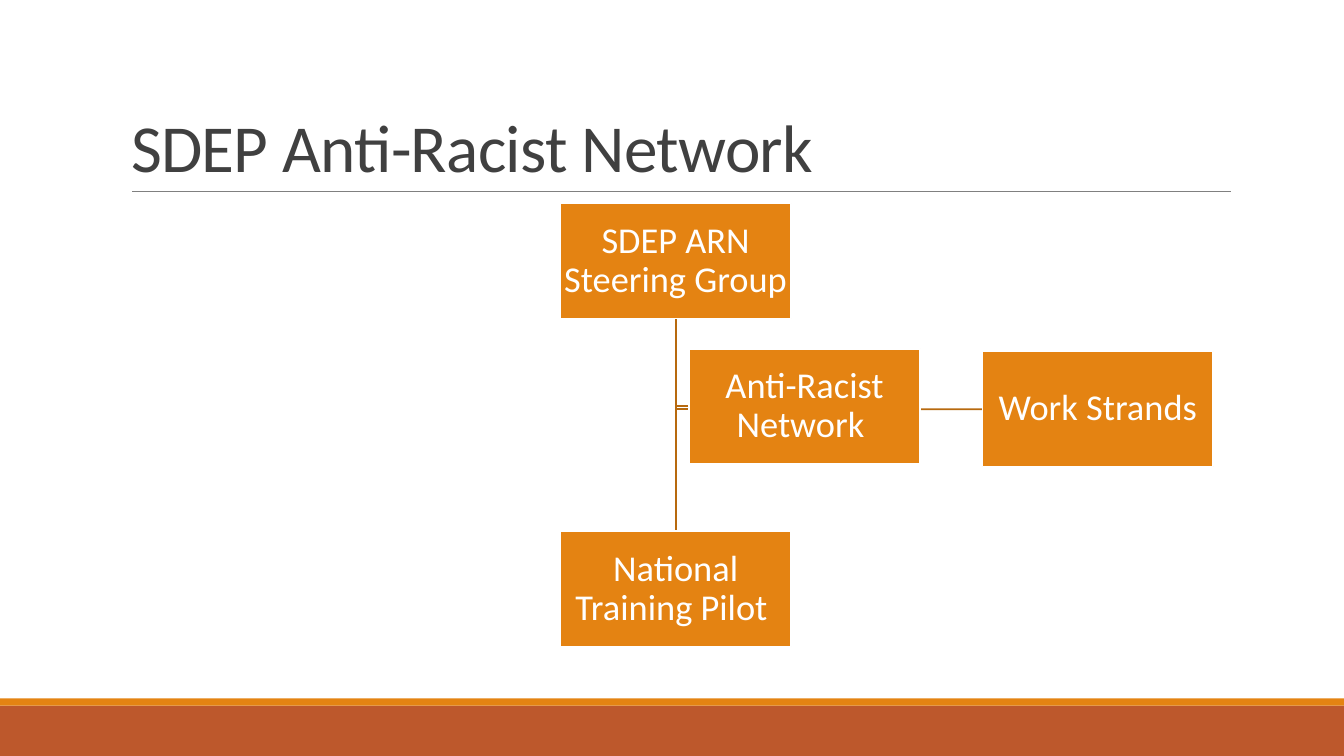
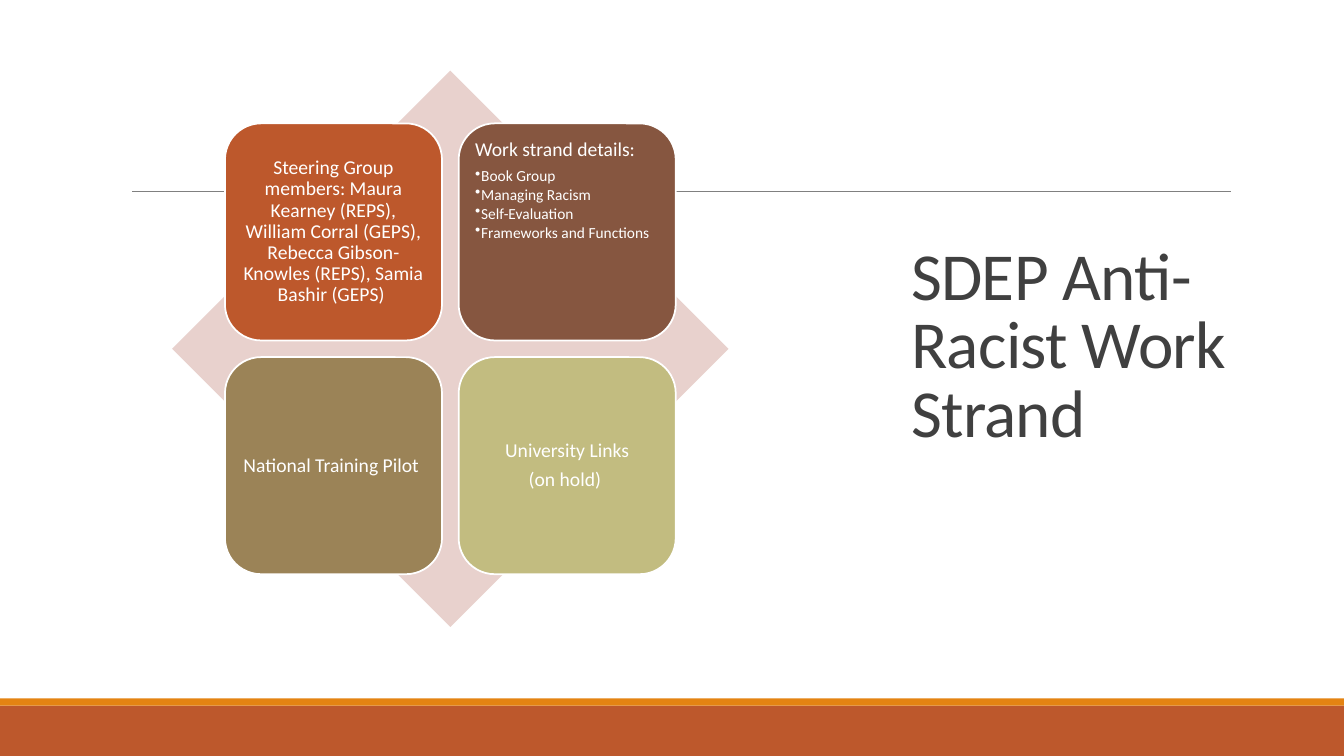
from dataclasses import dataclass

from lxml import etree
from pptx import Presentation
from pptx.dml.color import RGBColor
from pptx.enum.shapes import MSO_CONNECTOR, MSO_SHAPE
from pptx.enum.text import MSO_ANCHOR, MSO_AUTO_SIZE, PP_ALIGN
from pptx.oxml.ns import qn
from pptx.util import Cm, Pt

RECT, ROUND, DIAMOND = MSO_SHAPE.RECTANGLE, MSO_SHAPE.ROUNDED_RECTANGLE, MSO_SHAPE.DIAMOND
STRAIGHT = MSO_CONNECTOR.STRAIGHT
TOP, MIDDLE, BOTTOM = MSO_ANCHOR.TOP, MSO_ANCHOR.MIDDLE, MSO_ANCHOR.BOTTOM
LEFT, CENTER = PP_ALIGN.LEFT, PP_ALIGN.CENTER
NO_FIT = MSO_AUTO_SIZE.NONE
TITLE_ONLY = 5
# Connection sites of a rectangle
SITE_TOP, SITE_LEFT, SITE_BOTTOM = 0, 1, 2


@dataclass(frozen=True)
class Theme:
    font: str = "Calibri"
    ink: str = "404040"
    white: str = "FFFFFF"
    rule: str = "808080"
    rust: str = "BD582C"
    orange: str = "E48312"
    link: str = "B7690E"
    brown: str = "865640"
    tan: str = "9B8357"
    olive: str = "C2BC80"
    blush: str = "E8D1CD"
    title: float = 48
    box: float = 26
    tile: float = 14
    item: float = 11
    edge: float = 1.25
    hair: float = 0.5


THEME = Theme()
WIDE, HIGH = 33.87, 19.05


def add_block(slide, kind, box, fill, edge=None):
    """Add a filled shape; box is left, top, width, height in cm."""
    shape = slide.shapes.add_shape(kind, *map(Cm, box))
    shape.shadow.inherit = False
    shape.fill.solid()
    shape.fill.fore_color.rgb = RGBColor.from_string(fill)
    if edge:
        shape.line.color.rgb = RGBColor.from_string(edge)
        shape.line.width = Pt(THEME.edge)
    else:
        shape.line.fill.background()
    return shape


def add_line(slide, start, end, color, width):
    line = slide.shapes.add_connector(STRAIGHT, *map(Cm, start + end))
    line.line.color.rgb = RGBColor.from_string(color)
    line.line.width = Pt(width)
    etree.SubElement(line.element.spPr, qn("a:effectLst"))
    return line


def set_para(para, size, color, align, pitch, after=0):
    para.alignment = align
    para.line_spacing = pitch
    para.space_after = Pt(after)
    para.font.name = THEME.font
    para.font.size = Pt(size)
    para.font.color.rgb = RGBColor.from_string(color)


def set_bullet(para, indent):
    para.level = 1
    props = para._p.get_or_add_pPr()
    props.set("marL", str(Cm(indent)))
    props.set("indent", str(-Cm(indent)))
    mark = etree.Element(qn("a:buChar"), char="•")
    # Bullets precede the default run properties
    props.find(qn("a:defRPr")).addprevious(mark)


def fill_text(shape, lines, size, inset, align=CENTER, anchor=MIDDLE, items=()):
    frame = shape.text_frame
    frame.word_wrap = True
    frame.vertical_anchor = anchor
    frame.margin_left = frame.margin_right = Cm(inset)
    frame.margin_top = frame.margin_bottom = Cm(inset)
    frame.text = "\n".join([*lines, *items])
    for i, para in enumerate(frame.paragraphs):
        if i < len(lines):
            set_para(para, size, THEME.white, align, 0.9, 0.35 * size)
        else:
            set_para(para, THEME.item, THEME.white, align, 0.9, 0.15 * THEME.item)
            set_bullet(para, 0.15)


def add_page(deck, text, box, anchor):
    """Start a slide with the shared bands, rule and title style."""
    slide = deck.slides.add_slide(deck.slide_layouts[TITLE_ONLY])
    # Footer bands and title rule
    add_block(slide, RECT, (0, 17.78, WIDE, 1.27), THEME.rust)
    add_block(slide, RECT, (0, 17.6, WIDE, 0.18), THEME.orange)
    add_line(slide, (3.33, 4.83), (31.01, 4.83), THEME.rule, THEME.hair)
    # Title
    title = slide.shapes.title
    title.left, title.top, title.width, title.height = map(Cm, box)
    frame = title.text_frame
    frame.text = text
    frame.word_wrap = True
    frame.auto_size = NO_FIT
    frame.vertical_anchor = anchor
    para = frame.paragraphs[0]
    set_para(para, THEME.title, THEME.ink, LEFT, 0.85)
    para.runs[0].font._element.set("spc", "-50")
    return slide


def draw_chart(slide, left, top):
    """Draw the organisation chart from its top left corner."""
    wide, high = 5.82, 2.9
    trunk = left + wide / 2
    spots = {
        "lead": (left, top, "SDEP ARN Steering Group "),
        "pilot": (left, top + 8.26, "National Training Pilot "),
        "net": (left + 3.25, top + 3.66, "Anti-Racist Network "),
        "work": (left + 10.64, top + 3.73, "Work Strands"),
    }
    # Lines lie behind the boxes
    stem = add_line(slide, (trunk, top + high), (trunk, top + 8.26),
                    THEME.link, THEME.edge)
    arms = {}
    for name in ("work", "net"):
        x, y, _ = spots[name]
        mid = y + high / 2
        arms[name] = add_line(slide, (trunk, mid), (x, mid), THEME.link, THEME.edge)
    # Boxes
    boxes = {}
    for name, (x, y, text) in spots.items():
        boxes[name] = add_block(slide, RECT, (x, y, wide, high),
                                THEME.orange, THEME.white)
        fill_text(boxes[name], [text], THEME.box, 0.05)
    # Attach the lines
    stem.begin_connect(boxes["lead"], SITE_BOTTOM)
    stem.end_connect(boxes["pilot"], SITE_TOP)
    for name, arm in arms.items():
        arm.end_connect(boxes[name], SITE_LEFT)


def draw_matrix(slide, left, top, size):
    """Draw four tiles centred on a diamond of the given size."""
    side, gap = 5.47, 0.42
    inset = (size - 2 * side - gap) / 2
    add_block(slide, DIAMOND, (left, top, size, size), THEME.blush)
    # Tiles, row by row
    tiles = [
        (THEME.rust, ["Steering Group members: Maura Kearney (REPS), "
                      "William Corral (GEPS), Rebecca Gibson-Knowles (REPS), "
                      "Samia Bashir (GEPS) "], {}),
        (THEME.brown, ["Work strand details:"],
         {"align": LEFT, "anchor": TOP,
          "items": ["Book Group", "Managing Racism", "Self-Evaluation",
                    "Frameworks and Functions"]}),
        (THEME.tan, ["National Training Pilot "], {}),
        (THEME.olive, ["University Links", "(on hold) "], {}),
    ]
    for i, (fill, lines, style) in enumerate(tiles):
        row, col = divmod(i, 2)
        x = left + inset + col * (side + gap)
        y = top + inset + row * (side + gap)
        tile = add_block(slide, ROUND, (x, y, side, side), fill, THEME.white)
        fill_text(tile, lines, THEME.tile, 0.15, **style)


def main():
    deck = Presentation()
    deck.slide_width, deck.slide_height = Cm(WIDE), Cm(HIGH)

    page = add_page(deck, "SDEP Anti-Racist Network", (3.05, 0.79, 27.94, 4.04), BOTTOM)
    draw_chart(page, 14.12, 5.13)

    page = add_page(deck, "SDEP Anti-Racist Work Strand", (22.71, 1.75, 9.37, 14.05), MIDDLE)
    draw_matrix(page, 4.34, 1.78, 14.02)

    deck.save("out.pptx")


if __name__ == "__main__":
    main()
